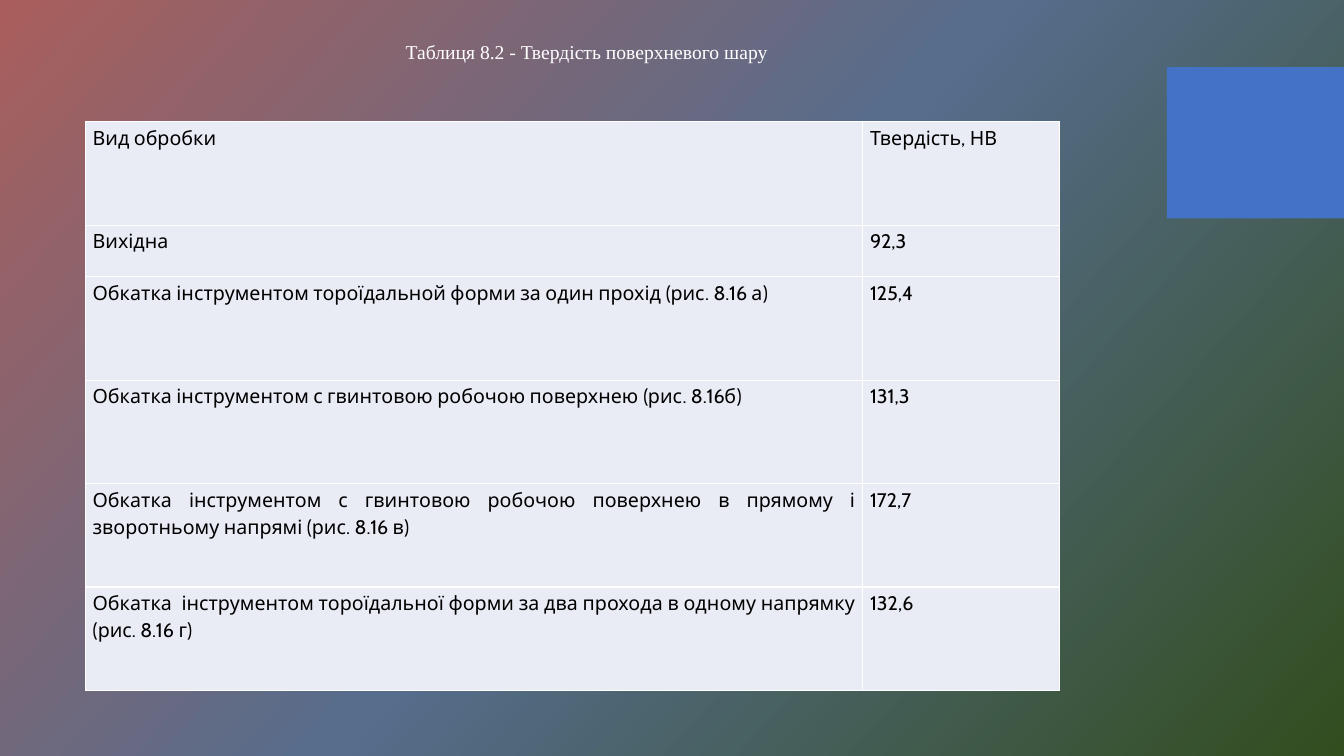
from copy import deepcopy
from lxml.etree import SubElement
from pptx import Presentation
from pptx.dml.color import RGBColor
from pptx.enum.shapes import MSO_SHAPE
from pptx.enum.text import MSO_ANCHOR, MSO_AUTO_SIZE, PP_ALIGN
from pptx.oxml.ns import qn
from pptx.util import Pt

HUES = {
    "red": "A95E5C", "blue": "566D8C", "green": "324D1E",
    "block": "4472C4", "cell": "E9EBF5", "white": "FFFFFF", "black": "000000",
}


def tint(name):
    return RGBColor.from_string(HUES[name])


def write(para, text, font, hue):
    run = para.add_run()
    run.text = text
    run.font.name = font
    run.font.size = Pt(14)
    run.font.color.rgb = tint(hue)


deck = Presentation()
deck.slide_width, deck.slide_height = Pt(960), Pt(540)
slide = deck.slides.add_slide(deck.slide_layouts[5])

# Background: three-stop diagonal gradient
fill = slide.background.fill
fill.gradient()
fill.gradient_angle = 318
stops = fill.gradient_stops
last = slide.background.fill.gradient_stops
tail = slide.element.find(".//" + qn("a:gsLst"))
tail.append(deepcopy(tail[-1]))
for stop, name, place in zip(fill.gradient_stops, ("red", "blue", "green"), (0, 0.5, 1)):
    stop.color.rgb = tint(name)
    stop.position = place

# Blue block at the right edge
block = slide.shapes.add_shape(MSO_SHAPE.RECTANGLE, Pt(833.5), Pt(48), Pt(126.5), Pt(108))
block.shadow.inherit = False
block.fill.solid()
block.fill.fore_color.rgb = tint("block")
block.line.fill.background()

# Caption
title = slide.shapes.title
title.left, title.top, title.width, title.height = Pt(247), Pt(25), Pt(560), Pt(24)
frame = title.text_frame
frame.word_wrap = True
frame.auto_size = MSO_AUTO_SIZE.NONE
frame.vertical_anchor = MSO_ANCHOR.MIDDLE
frame.margin_top = frame.margin_bottom = 0
para = frame.paragraphs[0]
para.alignment = PP_ALIGN.LEFT
para._p.get_or_add_pPr().set("indent", str(Pt(35.5)))
write(para, "Таблиця 8.2 - Твердість поверхневого шару", "Times New Roman", "white")

# Hardness table
rows = [
    ("Вид обробки", "Твердість, НВ"),
    ("Вихідна", "92,3"),
    ("Обкатка інструментом тороїдальной форми за один прохід (рис. 8.16 а)", "125,4"),
    ("Обкатка інструментом с гвинтовою робочою поверхнею (рис. 8.16б)", "131,3"),
    ("Обкатка інструментом с гвинтовою робочою поверхнею в прямому і "
     "зворотньому напрямі (рис. 8.16 в)", "172,7"),
    ("Обкатка  інструментом тороїдальної форми за два прохода в одному "
     "напрямку (рис. 8.16 г)", "132,6"),
]
table = slide.shapes.add_table(len(rows), 2, Pt(61), Pt(87), Pt(696), Pt(406)).table
table.first_row = table.horz_banding = False
table.columns[0].width, table.columns[1].width = Pt(555.3), Pt(140.7)

for r, row in enumerate(rows):
    table.rows[r].height = Pt(36.9 if r == 1 else 73.85)
    for c, text in enumerate(row):
        cell = table.cell(r, c)
        cell.margin_left = cell.margin_right = Pt(5.2)
        cell.margin_top, cell.margin_bottom = Pt(0.75), 0
        para = cell.text_frame.paragraphs[0]
        para.alignment = PP_ALIGN.JUSTIFY
        para.line_spacing = 1.15
        write(para, text, "Cabin", "black")

        # White borders come before the cell fill
        props = cell._tc.get_or_add_tcPr()
        for side in ("lnL", "lnR", "lnT", "lnB"):
            edge = SubElement(props, qn("a:" + side), w=str(Pt(1)))
            paint = SubElement(edge, qn("a:solidFill"))
            SubElement(paint, qn("a:srgbClr"), val=HUES["white"])
        cell.fill.solid()
        cell.fill.fore_color.rgb = tint("cell")

deck.save("out.pptx")
